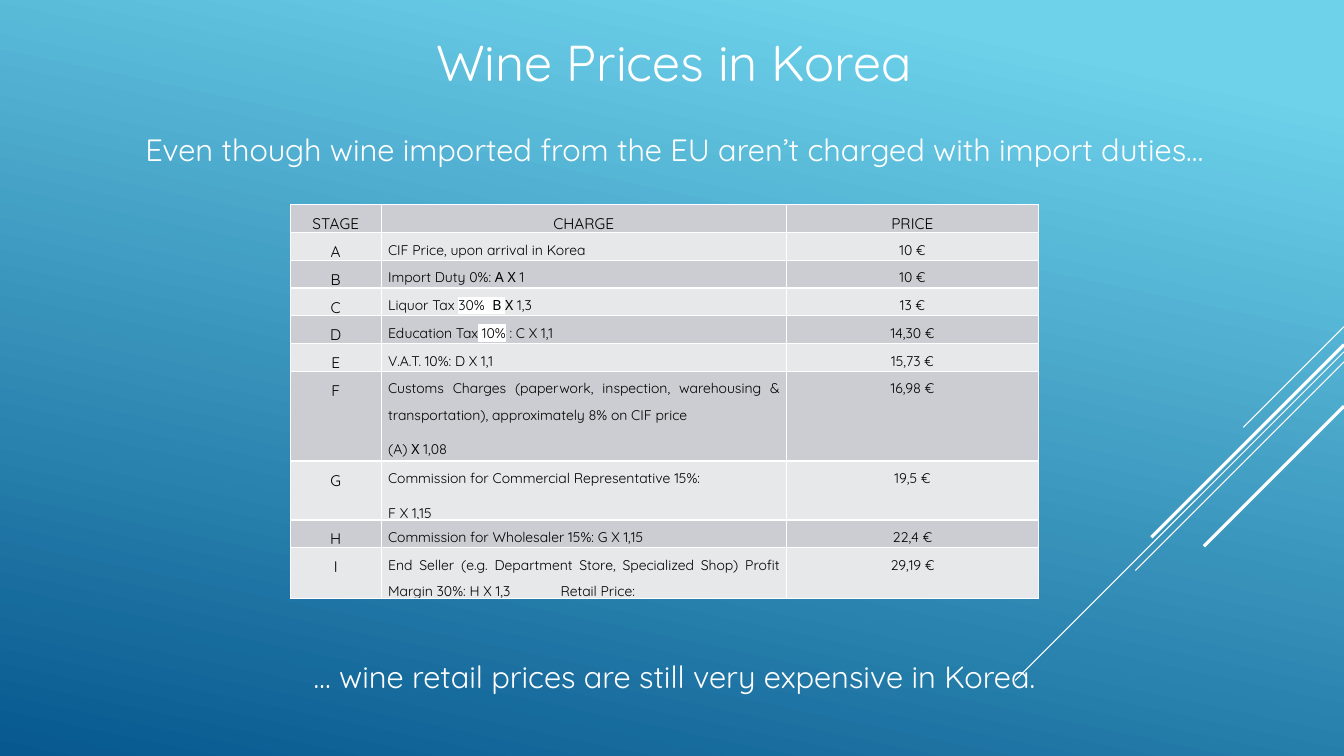
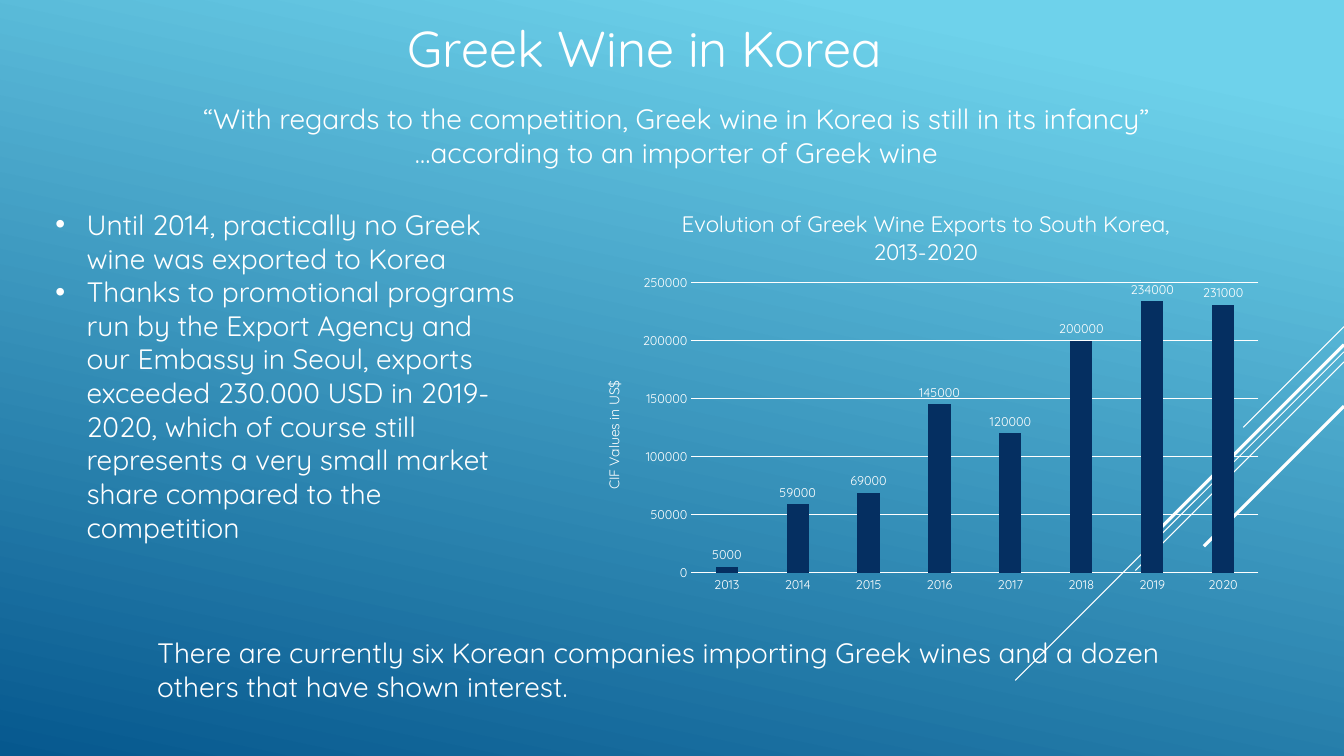
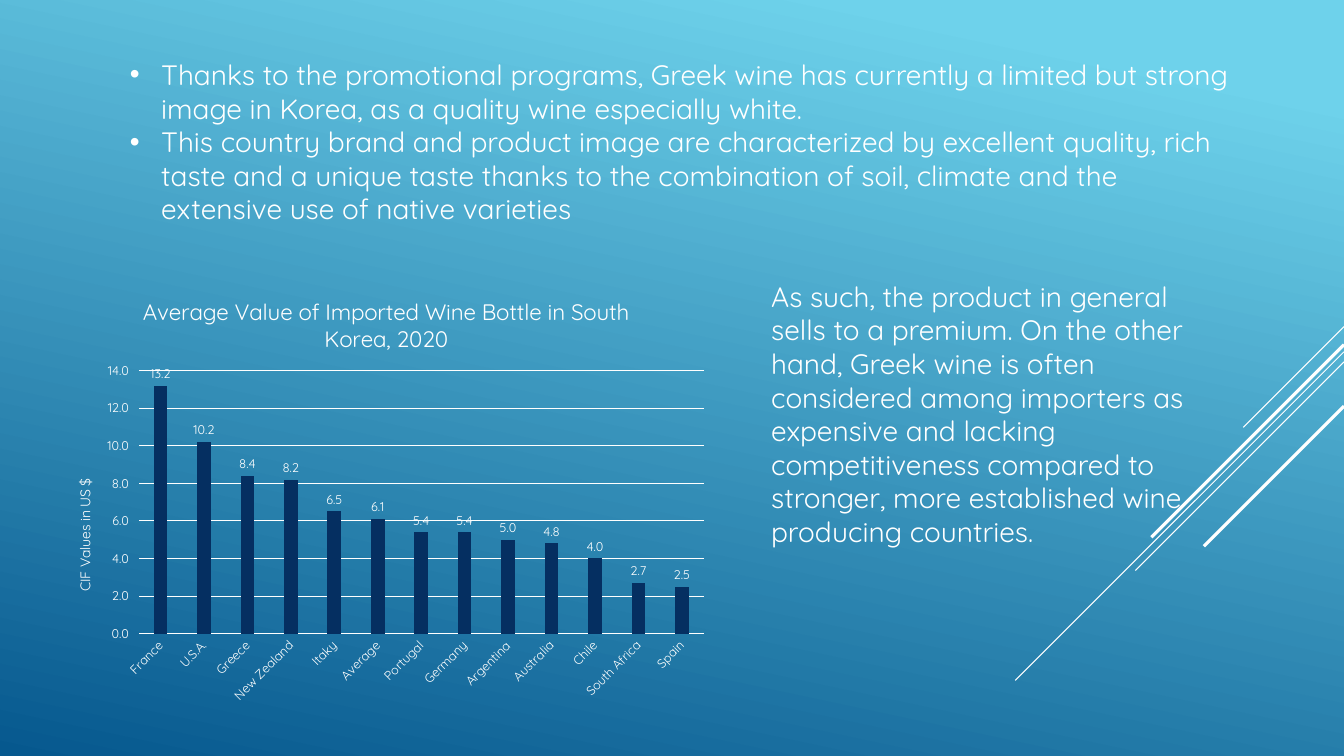
from pptx import Presentation
from pptx import util as u
from pptx.chart import data
from pptx.dml.color import RGBColor
from pptx.enum import chart as kinds, shapes, text
from pptx.oxml import parse_xml
from pptx.oxml.ns import nsdecls, qn

PX = 9144
FONT = "Quicksand"
HUES = {"white": "FFFFFF", "black": "000000", "sky": "6ED2EB", "deep": "06588E",
        "navy": "052F61", "dark": "CCCDD2", "pale": "E7E8EA"}
LEFT, MID, FULL = text.PP_ALIGN.LEFT, text.PP_ALIGN.CENTER, text.PP_ALIGN.JUSTIFY
CELL = {"line_spacing": 1.5, "space_after": u.Pt(6)}
RAYS = [(324, 100, 0.75), (349, 326, 0.75), (359, 207, 0.75), (342, 191, 2.25), (403, 139, 2.25)]
WIDE, TALL = 1333, 750

ROWS = [
    (23, "STAGE", "CHARGE", "PRICE"),
    (23, "A", "CIF Price, upon arrival in Korea", "10 €"),
    (23, "B", "Import Duty 0%: Α Χ 1", "10 €"),
    (23, "C", "Liquor Tax |30%  Β |Χ 1,3", "13 €"),
    (23, "D", "Education Tax| 10%| : C X 1,1", "14,30 €"),
    (23, "E", "V.A.T. 10%: D X 1,1", "15,73 €"),
    (89, "F", "Customs Charges (paperwork, inspection, warehousing & transportation), "
     "approximately 8% on CIF price\n(A) Χ 1,08", "16,98 €"),
    (52, "G", "Commission for Commercial Representative 15%:\nF X 1,15", "19,5 €"),
    (23, "H", "Commission for Wholesaler 15%: G X 1,15", "22,4 €"),
    (47, "I", "End Seller (e.g. Department Store, Specialized Shop) Profit Margin 30%: "
     "H X 1,3\tRetail Price:", "29,19 €"),
]
YEARS = {"2013": 5000, "2014": 59000, "2015": 69000, "2016": 145000,
         "2017": 120000, "2018": 200000, "2019": 234000, "2020": 231000}
LANDS = {"France": 13.2, "U.S.A.": 10.2, "Greece": 8.4, "New Zealand": 8.2, "Itaky": 6.5,
         "Average": 6.1, "Portugal": 5.4, "Germany": 5.4, "Argentina": 5, "Australia": 4.8,
         "Chile": 4, "South Africa": 2.7, "Spain": 2.5}


def px(*nums):
    return [u.Emu(n * PX) for n in nums]


def hue(name):
    return RGBColor.from_string(HUES[name])


def put(item, **vals):
    for key, val in vals.items():
        setattr(item, key, val)


def node(xml, space="a"):
    tag, rest = xml[1:].split(" ", 1)
    return parse_xml(f"<{tag} {nsdecls(space)} {rest}")


def style(font, size, ink="white"):
    put(font, size=u.Pt(size), name=FONT, bold=False)
    font.color.rgb = hue(ink)


def mark(run):
    fill = run.font.fill._xPr.find(qn("a:solidFill"))
    fill.addnext(node(f'<a:highlight ><a:srgbClr val="{HUES["white"]}"/></a:highlight>'))


def bullet(para):
    props = para._p.get_or_add_pPr()
    for key, val in {"marL": 31, "indent": -31}.items():
        props.set(key, str(val * PX))
    props.append(node('<a:buFont typeface="Arial"/>'))
    props.append(node('<a:buChar char="•"/>'))


def write(frame, words, size, ink="white", dots=False, **form):
    for num, line in enumerate(words.split("\n")):
        para = frame.add_paragraph() if num else frame.paragraphs[0]
        put(para, **form)
        if dots:
            bullet(para)
        if "\t" in line:
            para._p.get_or_add_pPr().append(
                node(f'<a:tabLst ><a:tab pos="{171 * PX}" algn="l"/></a:tabLst>'))
        for part, piece in enumerate(line.split("|")):
            run = para.add_run()
            run.text = piece
            style(run.font, size, ink)
            if part % 2:
                mark(run)


def box(slide, area, words, size=20, align=LEFT, dots=False):
    frame = slide.shapes.add_textbox(*px(*area)).text_frame
    put(frame, word_wrap=True, auto_size=text.MSO_AUTO_SIZE.SHAPE_TO_FIT_TEXT)
    write(frame, words, size, dots=dots, alignment=align)


def backdrop(master):
    fill = master.background.fill
    fill.gradient()
    fill.gradient_angle = 258
    for stop, (name, pos) in zip(fill.gradient_stops, [("sky", 0.1), ("deep", 1)]):
        stop.color.rgb = hue(name)
        stop.position = pos


def page(deck):
    slide = deck.slides.add_slide(deck.slide_layouts[6])
    for top, run, width in RAYS:
        ray = slide.shapes.add_connector(shapes.MSO_CONNECTOR.STRAIGHT,
                                         *px(WIDE, top, WIDE - run, top + run))
        ray.line.color.rgb = hue("white")
        ray.line.width = u.Pt(width)
        ray.element.spPr.append(node("<a:effectLst />"))
    return slide


def edge(cell):
    props = cell._tc.get_or_add_tcPr()
    for num, side in enumerate("LRTB"):
        props.insert(num, node(
            f'<a:ln{side} w="12700"><a:solidFill><a:srgbClr val="{HUES["white"]}"/>'
            f'</a:solidFill></a:ln{side}>'))


def grid(slide, area, cols, rows):
    table = slide.shapes.add_table(len(rows), len(cols), *px(*area)).table
    put(table, first_row=False, horz_banding=False)
    for col, width in zip(table.columns, px(*cols)):
        col.width = width
    for r, (tall, *words) in enumerate(rows):
        table.rows[r].height = u.Emu(tall * PX)
        for c, word in enumerate(words):
            cell = table.cell(r, c)
            side = u.Emu(7 * PX)
            put(cell, margin_left=side, margin_right=side, margin_top=0, margin_bottom=0)
            cell.fill.solid()
            cell.fill.fore_color.rgb = hue("pale" if r % 2 else "dark")
            edge(cell)
            write(cell.text_frame, word, 10 if r and c else 11, "black",
                  alignment=FULL if r and c == 1 else MID, **CELL)


def place(item, spot, slot):
    for old in item.findall(qn("c:layout")):
        item.remove(old)
    inner = '<c:layoutTarget val="inner"/>' if len(spot) == 4 else ""
    modes = "".join(f'<c:{k}Mode val="edge"/>' for k in "xy")
    sizes = "".join(f'<c:{k} val="{v}"/>' for k, v in zip("xywh", spot))
    item.insert(slot, node(
        f"<c:layout ><c:manualLayout>{inner}{modes}{sizes}</c:manualLayout></c:layout>", "c"))


def head(owner, words, size, spot):
    write(owner.text_frame, words, size)
    place(owner.element, spot, 1)


def bars(slide, area, vals, title, side, spots, step, top, form, tick, turn=0):
    facts = data.CategoryChartData(number_format=form)
    facts.categories = list(vals)
    facts.add_series("Series 1", list(vals.values()))
    chart = slide.shapes.add_chart(kinds.XL_CHART_TYPE.COLUMN_CLUSTERED, *px(*area), facts).chart
    put(chart, has_legend=False, has_title=True)
    style(chart.font, 10)
    head(chart.chart_title, title, 16, spots["title"])
    place(chart.element.xpath("c:chart/c:plotArea")[0], spots["plot"], 0)

    plot = chart.plots[0]
    put(plot, gap_width=219, overlap=-27, vary_by_categories=False, has_data_labels=True)
    fill = plot.series[0].format.fill
    fill.solid()
    fill.fore_color.rgb = hue("navy")
    tags = plot.data_labels
    put(tags, show_value=True, position=kinds.XL_LABEL_POSITION.OUTSIDE_END,
        number_format=form, number_format_is_linked=False)

    cat, val = chart.category_axis, chart.value_axis
    put(val, minimum_scale=0, maximum_scale=top, major_unit=step,
        has_major_gridlines=True, has_title=True)
    head(val.axis_title, side, 10, (0.03, 0.46))
    put(val.tick_labels, number_format=form, number_format_is_linked=False)
    for item in (tags, cat.tick_labels, val.tick_labels):
        style(item.font, 9)
    none = kinds.XL_TICK_MARK.NONE
    put(cat, major_tick_mark=none, minor_tick_mark=none)
    put(val, major_tick_mark=tick, minor_tick_mark=none)
    for line in (cat.format.line, val.major_gridlines.format.line):
        line.color.rgb = hue("white")
        line.width = u.Pt(0.75)
    val.format.line.fill.background()
    if turn:
        chart.element.xpath(".//c:catAx/c:txPr/a:bodyPr")[0].set("rot", str(turn * 60000))


def prices(deck):
    slide = page(deck)
    box(slide, (267, 26, 803, 71), "Wine Prices in Korea", 36, MID)
    box(slide, (84, 125, 1170, 47),
        "Even though wine imported from the EU aren’t charged with import duties…", 22, MID)
    grid(slide, (288, 203, 742, 349), (90, 402, 250), ROWS)
    box(slide, (262, 648, 814, 47),
        "… wine retail prices are still very expensive in Korea.", 22, MID)


def exports(deck):
    slide = page(deck)
    box(slide, (237, 12, 805, 71), "Greek Wine in Korea", 36, MID)
    box(slide, (37, 96, 1268, 77),
        "“With regards to the competition, Greek wine in Korea is still in its infancy”\n"
        "…according to an importer of Greek wine", 20, MID)
    box(slide, (45, 201, 478, 347),
        "Until 2014, practically no Greek wine was exported to Korea\n"
        "Thanks to promotional programs run by the Export Agency and our Embassy in Seoul, "
        "exports exceeded 230.000 USD in 2019-2020, which of course still represents a very "
        "small market share compared to the competition", dots=True)
    bars(slide, (576, 186, 686, 411), YEARS,
         "Evolution of Greek Wine Exports to South Korea, 2013-2020", "CIF Values in US$",
         {"title": (0.14, 0.04), "plot": (0.16, 0.23, 0.82, 0.7)},
         50000, 250000, "General", kinds.XL_TICK_MARK.NONE)
    box(slide, (146, 626, 1080, 77),
        "There are currently six Korean companies importing Greek wines and a dozen others "
        "that have shown interest.")


def values(deck):
    slide = page(deck)
    box(slide, (119, 52, 1113, 178),
        "Thanks to the promotional programs, Greek wine has currently a limited but strong "
        "image in Korea, as a quality wine especially white.\n"
        "This country brand and product image are characterized by excellent quality, rich "
        "taste and a unique taste thanks to the combination of soil, climate and the "
        "extensive use of native varieties", dots=True)
    bars(slide, (52, 272, 659, 435), LANDS,
         "Average Value of Imported Wine Bottle in South Korea, 2020", "CIF Values in US $",
         {"title": (0.13, 0.04), "plot": (0.13, 0.22, 0.85, 0.6)},
         2, 14, "0.0", kinds.XL_TICK_MARK.OUTSIDE, -45)
    box(slide, (755, 272, 464, 279),
        "As such, the product in general sells to a premium. On the other hand, Greek wine is "
        "often considered among importers as expensive and lacking competitiveness compared "
        "to stronger, more established wine producing countries.")


def main():
    deck = Presentation()
    deck.slide_width, deck.slide_height = px(WIDE, TALL)
    backdrop(deck.slide_master)
    for make in (prices, exports, values):
        make(deck)
    deck.save("out.pptx")


if __name__ == "__main__":
    main()
